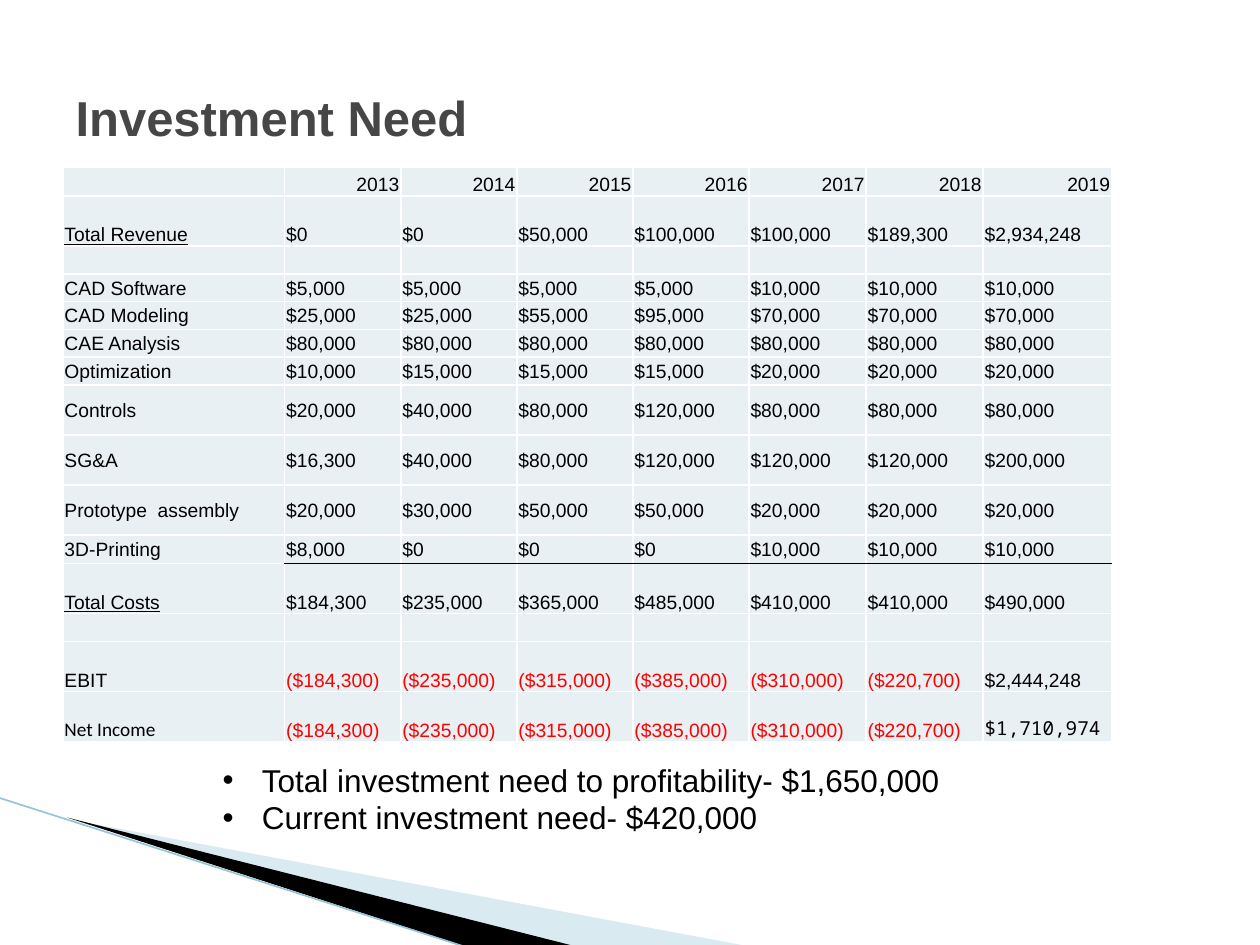
from lxml.etree import SubElement
from pptx import Presentation
from pptx.dml.color import RGBColor
from pptx.enum.shapes import MSO_CONNECTOR as Connector
from pptx.enum.text import MSO_ANCHOR as Anchor, MSO_AUTO_SIZE as AutoSize, PP_ALIGN as Align
from pptx.oxml.ns import qn
from pptx.util import Cm, Pt

COLUMN_WIDTHS = [4.47] + [2.34] * 4 + [2.36] * 2 + [2.59]
SHORT, RULED, TALL = 0.56, 0.57, 1.01
BOTTOM, MIDDLE = Anchor.BOTTOM, Anchor.MIDDLE
ROWS = [
    (RULED, BOTTOM, "|2013|2014|2015|2016|2017|2018|2019"),
    (TALL, BOTTOM, "Total Revenue|$0|$0|$50,000|$100,000|$100,000|$189,300|$2,934,248"),
    (SHORT, MIDDLE, "|||||||"),
    (SHORT, MIDDLE, "CAD Software|$5,000|$5,000|$5,000|$5,000|$10,000|$10,000|$10,000"),
    (SHORT, MIDDLE, "CAD Modeling|$25,000|$25,000|$55,000|$95,000|$70,000|$70,000|$70,000"),
    (SHORT, MIDDLE, "CAE Analysis" + "|$80,000" * 7),
    (SHORT, MIDDLE, "Optimization|$10,000|$15,000|$15,000|$15,000|$20,000|$20,000|$20,000"),
    (TALL, MIDDLE, "Controls|$20,000|$40,000|$80,000|$120,000|$80,000|$80,000|$80,000"),
    (TALL, MIDDLE, "SG&A|$16,300|$40,000|$80,000|$120,000|$120,000|$120,000|$200,000"),
    (TALL, MIDDLE, "Prototype  assembly|$20,000|$30,000|$50,000|$50,000|$20,000|$20,000|$20,000"),
    (RULED, MIDDLE, "3D-Printing|$8,000|$0|$0|$0|$10,000|$10,000|$10,000"),
    (TALL, BOTTOM, "Total Costs|$184,300|$235,000|$365,000|$485,000|$410,000|$410,000|$490,000"),
    (SHORT, MIDDLE, "|||||||"),
    (TALL, BOTTOM, "EBIT|($184,300)|($235,000)|($315,000)|($385,000)|($310,000)|($220,700)|$2,444,248"),
    (TALL, BOTTOM, "Net Income|($184,300)|($235,000)|($315,000)|($385,000)|($310,000)|($220,700)|$1,710,974"),
]
LAST_COST_ROW = 10
SPECIAL_FONTS = {"Net Income": "Calibri", "$1,710,974": "Noto Sans Mono"}


def color(value):
    """Return a hex string as a colour."""
    return RGBColor.from_string(value)


def format_runs(paragraph, size, value="000000", font="Arial", bold=False):
    """Set the font of every run in a paragraph."""
    for run in paragraph.runs:
        run.font.name = font
        run.font.size = Pt(size)
        run.font.bold = bold
        run.font.color.rgb = color(value)


def set_title(slide, text):
    """Place and format the title placeholder."""
    title = slide.shapes.title
    title.left, title.top, title.width, title.height = Cm(1.27), Cm(0.76), Cm(22.86), Cm(3.18)
    title.text_frame.text = text
    title.text_frame.vertical_anchor = MIDDLE
    paragraph = title.text_frame.paragraphs[0]
    paragraph.alignment = Align.LEFT
    format_runs(paragraph, 28, "464646", bold=True)


def add_wedge(slide, points, fill, opacity=100):
    """Draw a filled polygon without an outline."""
    start, *others = [(Cm(x), Cm(y)) for x, y in points]
    builder = slide.shapes.build_freeform(*start)
    builder.add_line_segments(others)
    shape = builder.convert_to_shape()
    shape.shadow.inherit = False
    shape.line.fill.background()
    shape.fill.solid()
    shape.fill.fore_color.rgb = color(fill)
    if opacity < 100:
        fill_color = shape._element.spPr.find(".//" + qn("a:srgbClr"))
        SubElement(fill_color, qn("a:alpha"), val=str(opacity * 1000))


def add_line(slide, start, end, value, width):
    """Draw a straight line between two points."""
    ends = [Cm(length) for length in (*start, *end)]
    line = slide.shapes.add_connector(Connector.STRAIGHT, *ends)
    line.line.color.rgb = color(value)
    line.line.width = Pt(width)
    SubElement(line._element.spPr, qn("a:effectLst"))


def set_borders(cell, top, bottom):
    """Give a cell white side borders and the chosen top and bottom."""
    properties = cell._tc.get_or_add_tcPr()
    for side, value in (("L", "FFFFFF"), ("R", "FFFFFF"), ("T", top), ("B", bottom)):
        border = SubElement(properties, qn(f"a:ln{side}"), w=str(Pt(1)))
        fill = SubElement(border, qn("a:solidFill"))
        SubElement(fill, qn("a:srgbClr"), val=value)


def fill_cell(cell, text, anchor, alignment):
    """Write and format one table cell."""
    cell.fill.solid()
    cell.fill.fore_color.rgb = color("E8F0F4")
    cell.margin_left = cell.margin_right = cell.margin_top = Cm(0.03)
    cell.margin_bottom = 0
    cell.vertical_anchor = anchor
    paragraph = cell.text_frame.paragraphs[0]
    if not text:
        paragraph._p.get_or_add_endParaRPr().set("sz", "1100")
        return
    paragraph.text = text
    paragraph.alignment = alignment
    value = "FF0000" if text.startswith("(") else "000000"
    format_runs(paragraph, 11, value, SPECIAL_FONTS.get(text, "Arial"))
    if text.startswith("Total"):
        paragraph.runs[0].font.underline = True


def add_budget_table(slide):
    """Add the yearly revenue and cost table."""
    frame = slide.shapes.add_table(len(ROWS), len(COLUMN_WIDTHS), Cm(1.27), Cm(3.38),
                                   Cm(sum(COLUMN_WIDTHS)), Cm(sum(row[0] for row in ROWS)))
    table = frame.table
    table.first_row = table.horz_banding = False
    for column, width in zip(table.columns, COLUMN_WIDTHS):
        column.width = Cm(width)
    for row_index, (height, anchor, texts) in enumerate(ROWS):
        table.rows[row_index].height = Cm(height)
        alignment = Align.LEFT if row_index else Align.RIGHT
        for column_index, text in enumerate(texts.split("|")):
            cell = table.cell(row_index, column_index)
            top = "000000" if column_index and row_index == LAST_COST_ROW + 1 else "FFFFFF"
            bottom = "000000" if column_index and row_index == LAST_COST_ROW else "FFFFFF"
            set_borders(cell, top, bottom)
            fill_cell(cell, text, anchor, alignment)


def add_bullets(slide, lines):
    """Add the bulleted summary below the table."""
    box = slide.shapes.add_textbox(Cm(4.24), Cm(15.21), Cm(19.89), Cm(2.57))
    text_frame = box.text_frame
    text_frame.word_wrap = True
    text_frame.auto_size = AutoSize.SHAPE_TO_FIT_TEXT
    text_frame.text = "\n".join(lines)
    for paragraph in text_frame.paragraphs:
        properties = paragraph._p.get_or_add_pPr()
        properties.set("marL", str(Cm(0.79)))
        properties.set("indent", str(-Cm(0.79)))
        SubElement(properties, qn("a:buFont"), typeface="Arial")
        SubElement(properties, qn("a:buChar"), char="•")
        format_runs(paragraph, 18)


def main():
    """Build and save the slide."""
    presentation = Presentation()
    presentation.slide_width, presentation.slide_height = Cm(25.4), Cm(19.05)
    slide = presentation.slides.add_slide(presentation.slide_layouts[5])
    add_wedge(slide, [(1.4, 16.52), (15.11, 19.08), (11.58, 19.08)], "A0CBDC", 40)
    add_wedge(slide, [(1.35, 16.48), (11.61, 19.08), (9.45, 19.1)], "000000")
    add_line(slide, (-0.03, 16.08), (9.42, 19.1), "97C5D8", 0.95)
    set_title(slide, "Investment Need")
    add_budget_table(slide)
    add_bullets(slide, ["Total investment need to profitability- $1,650,000",
                        "Current investment need- $420,000"])
    presentation.save("out.pptx")


if __name__ == "__main__":
    main()
